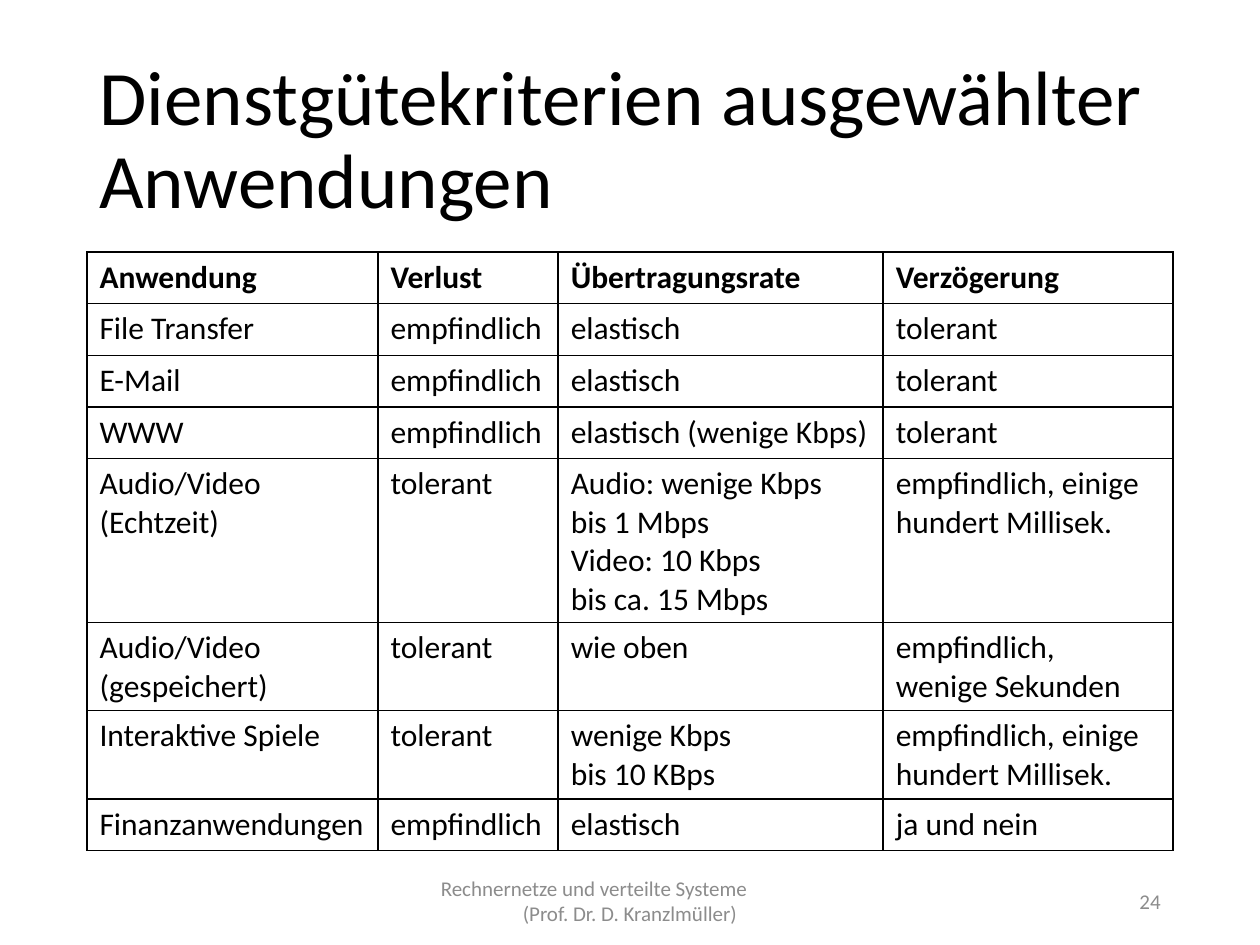
from lxml import etree
from pptx import Presentation
from pptx.dml.color import RGBColor
from pptx.enum.text import MSO_ANCHOR, PP_ALIGN
from pptx.oxml.ns import qn
from pptx.util import Inches, Pt

LEFT, CENTER, RIGHT = PP_ALIGN.LEFT, PP_ALIGN.CENTER, PP_ALIGN.RIGHT
MIDDLE = MSO_ANCHOR.MIDDLE
FONT = "Calibri"
COLORS = {"text": "000000", "border": "000000", "footer": "8C8C8C"}

COLUMN_WIDTHS = [2.31, 1.43, 2.58, 2.3]
ROW_HEIGHT = 0.41
SERVICE_ROWS = [
    ["Anwendung", "Verlust", "Übertragungsrate", "Verzögerung"],
    ["File Transfer", "empfindlich", "elastisch", "tolerant"],
    ["E-Mail", "empfindlich", "elastisch", "tolerant"],
    ["WWW", "empfindlich", "elastisch (wenige Kbps)", "tolerant"],
    ["Audio/Video (Echtzeit)", "tolerant",
     ["Audio: wenige Kbps\nbis 1 Mbps", "Video: 10 Kbps\nbis ca. 15 Mbps"],
     "empfindlich, einige hundert Millisek."],
    ["Audio/Video (gespeichert)", "tolerant", "wie oben",
     "empfindlich,\nwenige Sekunden"],
    ["Interaktive Spiele", "tolerant", "wenige Kbps\nbis 10 KBps",
     "empfindlich, einige hundert Millisek."],
    ["Finanzanwendungen", "empfindlich", "elastisch", "ja und nein"],
]


def add_text(para, text, size, color, bold=False):
    for index, line in enumerate(text.split("\n")):
        if index:
            para.add_line_break()
        span = para.add_run()
        span.text = line
        span.font.name = FONT
        span.font.size = Pt(size)
        span.font.bold = bold
        span.font.color.rgb = RGBColor.from_string(COLORS[color])


def next_para(frame, index):
    return frame.add_paragraph() if index else frame.paragraphs[0]


def add_box(page, place, lines, size, color, line_spacing=None):
    box = page.shapes.add_textbox(*(Inches(length) for length in place))
    frame = box.text_frame
    frame.word_wrap = True
    frame.vertical_anchor = MIDDLE
    for index, (text, align, indent) in enumerate(lines):
        para = next_para(frame, index)
        para.alignment = align
        if indent:
            para._p.get_or_add_pPr().set("marL", str(Inches(indent)))
        if line_spacing:
            para.line_spacing = line_spacing
        add_text(para, text, size, color)


def set_borders(cell):
    properties = cell._tc.get_or_add_tcPr()
    for index, side in enumerate(("a:lnL", "a:lnR", "a:lnT", "a:lnB")):
        line = etree.Element(qn(side), w=str(Pt(1)))
        fill = etree.SubElement(line, qn("a:solidFill"))
        etree.SubElement(fill, qn("a:srgbClr"), val=COLORS["border"])
        properties.insert(index, line)


def add_service_table(page):
    table = page.shapes.add_table(
        len(SERVICE_ROWS), len(COLUMN_WIDTHS), Inches(0.69), Inches(2),
        Inches(sum(COLUMN_WIDTHS)), Inches(ROW_HEIGHT * len(SERVICE_ROWS))).table
    table.first_row = False
    table.horz_banding = False
    for column, width in zip(table.columns, COLUMN_WIDTHS):
        column.width = Inches(width)
    for row_index, (row, entries) in enumerate(zip(table.rows, SERVICE_ROWS)):
        row.height = Inches(ROW_HEIGHT)
        for cell, entry in zip(row.cells, entries):
            cell.fill.background()
            set_borders(cell)
            paragraphs = [entry] if isinstance(entry, str) else entry
            for index, text in enumerate(paragraphs):
                para = next_para(cell.text_frame, index)
                add_text(para, text, 18, "text", bold=row_index == 0)


def main():
    deck = Presentation()
    deck.slide_width, deck.slide_height = Inches(10), Inches(7.5)
    page = deck.slides.add_slide(deck.slide_layouts[6])
    add_box(page, (0.69, 0.4, 8.62, 1.45),
            [("Dienstgütekriterien ausgewählter Anwendungen", LEFT, 0)],
            44, "text", line_spacing=0.9)
    add_service_table(page)
    add_box(page, (3.31, 6.95, 3.38, 0.4),
            [("Rechnernetze und verteilte Systeme", LEFT, 0.09),
             ("(Prof. Dr. D. Kranzlmüller)", CENTER, 0)], 12, "footer")
    add_box(page, (7.06, 6.95, 2.25, 0.4), [("24", RIGHT, 0)], 12, "footer")
    deck.save("out.pptx")


if __name__ == "__main__":
    main()
